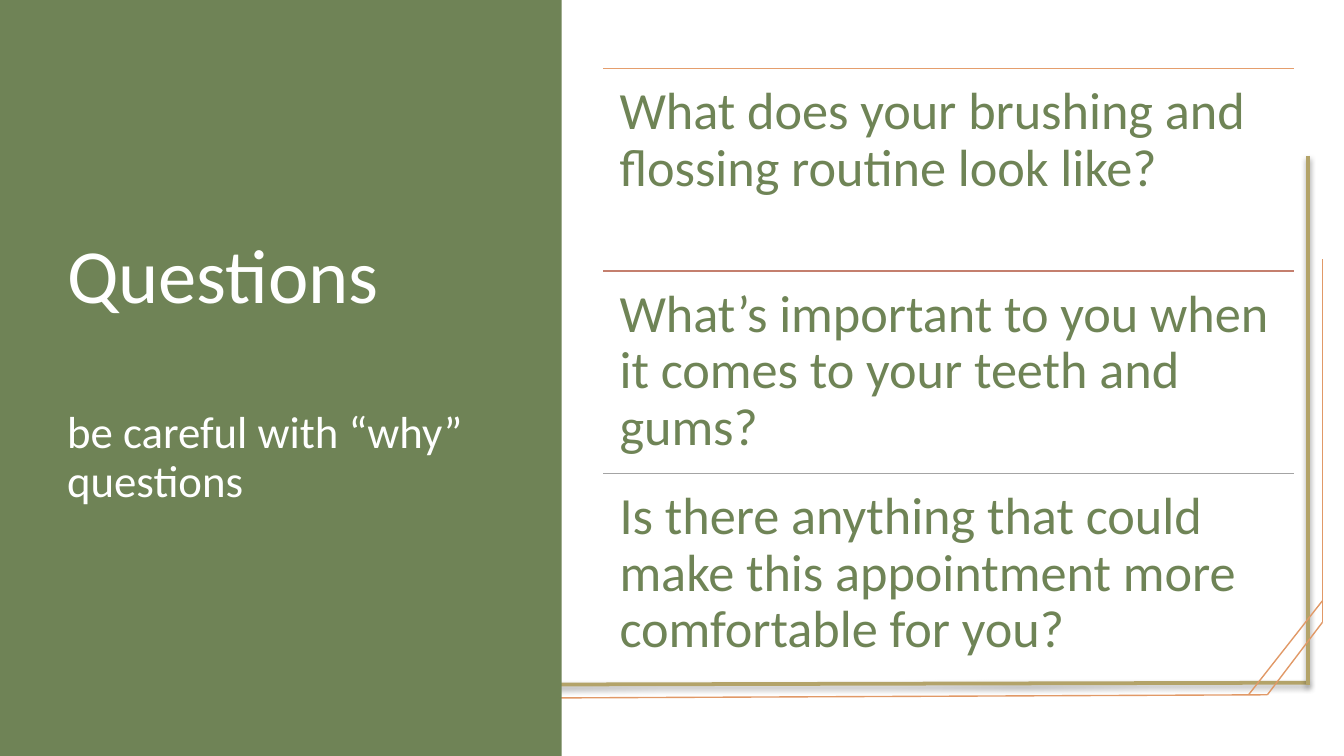
from lxml import etree
from pptx import Presentation
from pptx.dml.color import RGBColor
from pptx.enum.shapes import MSO_CONNECTOR as CONN, MSO_SHAPE as SHAPE
from pptx.enum.text import MSO_ANCHOR as ANCHOR
from pptx.oxml.ns import qn
from pptx.util import Inches, Pt

WHITE = RGBColor(0xFF, 0xFF, 0xFF)
GOLD = RGBColor(0xB3, 0xA3, 0x69)
ORANGE = RGBColor(0xE1, 0x99, 0x67)
PANEL_GREEN = RGBColor(0x6F, 0x83, 0x56)
TEXT_GREEN = RGBColor(0x6F, 0x84, 0x56)
RULE_ORANGE = RGBColor(0xE5, 0x9E, 0x6D)
RULE_RED = RGBColor(0xC4, 0x7F, 0x6E)
RULE_GRAY = RGBColor(0xA4, 0xA4, 0xA4)

FONT = "Calibri"
SLIDE_WIDTH = 10
SLIDE_HEIGHT = SLIDE_WIDTH * 9 / 16
GOLD_LINES = [(1.25, 5.1, 9.73, 5.08), (9.73, 1.16, 9.73, 5.1)]
ORANGE_LINES = [
    (9.84, 4.63, 9.43, 5.17),
    (9.84, 4.47, 9.29, 5.17),
    (9.43, 5.17, 2.57, 5.2),
    (9.84, 4.63, 9.84, 1.93),
]
QUESTIONS = [
    ("What does your brushing and flossing routine look like?", RULE_ORANGE),
    ("What’s important to you when it comes to your teeth and gums?", RULE_RED),
    ("Is there anything that could make this appointment more comfortable for you?", RULE_GRAY),
]
LIST_LEFT, LIST_TOP, LIST_WIDTH, LIST_HEIGHT = 4.49, 0.51, 5.14, 4.52
ROW_HEIGHT = LIST_HEIGHT / len(QUESTIONS)


def add_line(slide, ends, color, width, shadow=False):
    line = slide.shapes.add_connector(CONN.STRAIGHT, *map(Inches, ends))
    line.line.color.rgb = color
    line.line.width = Pt(width)
    effects = etree.SubElement(line._element.spPr, qn("a:effectLst"))
    if shadow:
        outer = etree.SubElement(
            effects, qn("a:outerShdw"), blurRad=str(Pt(3.1)), dist=str(Pt(1.6)),
            dir="5400000", rotWithShape="0")
        black = etree.SubElement(outer, qn("a:srgbClr"), val="000000")
        etree.SubElement(black, qn("a:alpha"), val="38000")


def add_panel(slide, box, color):
    sp = slide.shapes.add_shape(SHAPE.RECTANGLE, *map(Inches, box))
    sp.shadow.inherit = False
    sp.fill.solid()
    sp.fill.fore_color.rgb = color
    sp.line.fill.background()


def add_text(slide, box, paragraphs, color, inset, anchor=ANCHOR.TOP):
    tf = slide.shapes.add_textbox(*map(Inches, box)).text_frame
    tf.word_wrap = True
    tf.vertical_anchor = anchor
    tf.margin_left = tf.margin_right = Inches(inset[0])
    tf.margin_top = tf.margin_bottom = Inches(inset[1])
    for i, (text, size, before) in enumerate(paragraphs):
        p = tf.add_paragraph() if i else tf.paragraphs[0]
        p.line_spacing = 0.9
        p.space_before = Pt(before)
        r = p.add_run()
        r.text = text
        r.font.name = FONT
        r.font.size = Pt(size)
        r.font.color.rgb = color


def main():
    prs = Presentation()
    prs.slide_width, prs.slide_height = Inches(SLIDE_WIDTH), Inches(SLIDE_HEIGHT)
    slide = prs.slides.add_slide(prs.slide_layouts[6])
    for ends in GOLD_LINES:
        add_line(slide, ends, GOLD, 2, shadow=True)
    for ends in ORANGE_LINES:
        add_line(slide, ends, ORANGE, 0.75)

    add_panel(slide, (0, 0, 4.18, SLIDE_HEIGHT), PANEL_GREEN)
    title = [("Questions", 41, 0), ("be careful with “why” questions", 24, 48)]
    add_text(slide, (0.43, 0.51, 3.12, 4.52), title, WHITE, (0.07, 0.04), ANCHOR.MIDDLE)

    for i, (question, color) in enumerate(QUESTIONS):
        top = LIST_TOP + i * ROW_HEIGHT
        add_line(slide, (LIST_LEFT, top, LIST_LEFT + LIST_WIDTH, top), color, 1)
        add_text(slide, (LIST_LEFT, top, LIST_WIDTH, ROW_HEIGHT),
                 [(question, 28, 0)], TEXT_GREEN, (0.12, 0.12))
    prs.save("out.pptx")


if __name__ == "__main__":
    main()
